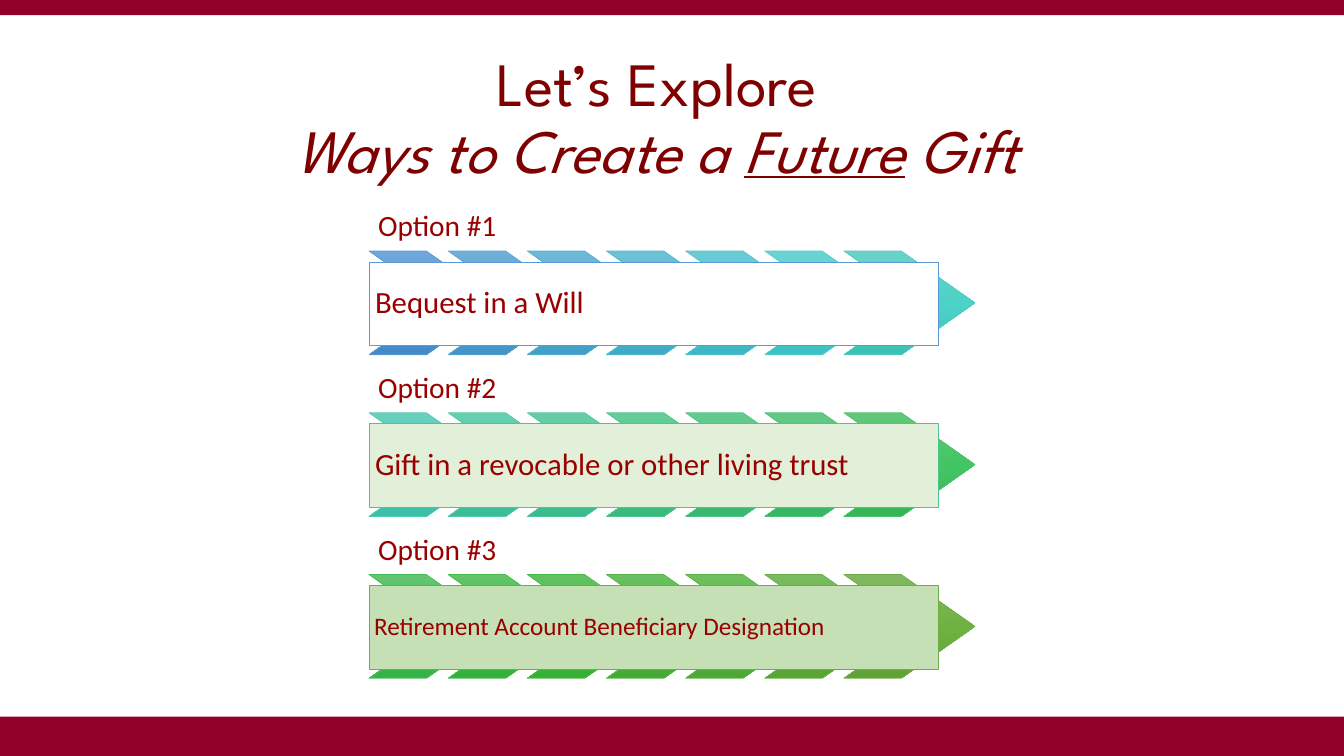
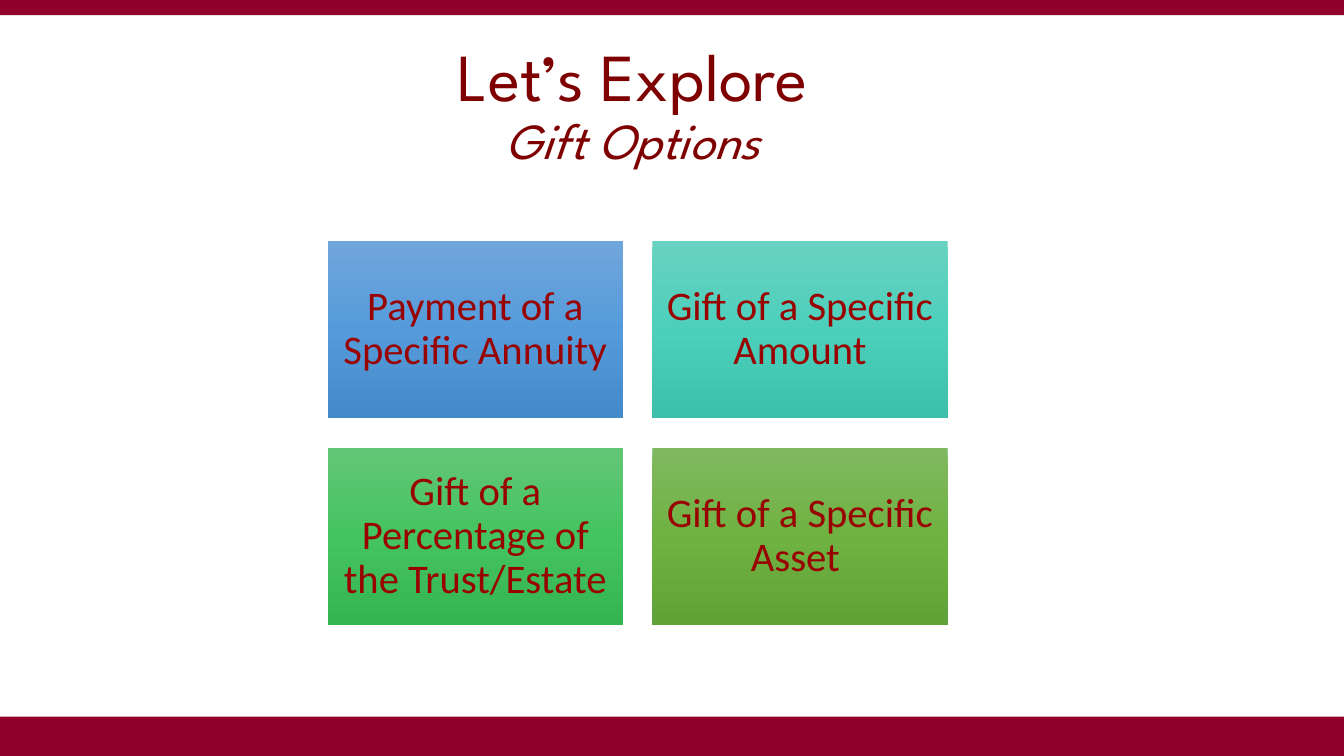
"""Build two slides on ways and options for creating a future gift."""
import colorsys
from copy import deepcopy

from pptx import Presentation
from pptx import util as u
from pptx.dml import color
from pptx.enum import shapes, text

BAND = "900028"
BLUE, GREEN = "5B9BD5", "70AD47"
TITLE = {"name": "League Spartan", "color": "7F0001"}
BODY = {"name": "Calibri", "color": "990000"}
RECTANGLE = shapes.MSO_SHAPE.RECTANGLE
CHEVRON = shapes.MSO_SHAPE.CHEVRON
CENTER, LEFT = text.PP_ALIGN.CENTER, text.PP_ALIGN.LEFT
MIDDLE, BOTTOM = text.MSO_ANCHOR.MIDDLE, text.MSO_ANCHOR.BOTTOM
WHITE_LIGHT, BLACK_LIGHT = 1, 0
GAMMA = 2.2


def add_shape(slide, kind, box, fills, line=None):
    """Add a shape with a solid or three-stop vertical gradient fill."""
    shape = slide.shapes.add_shape(kind, *[u.Inches(value) for value in box])
    shape.shadow.inherit = False
    if len(fills) == 1:
        shape.fill.solid()
        shape.fill.fore_color.rgb = color.RGBColor.from_string(fills[0])
    else:
        shape.fill.gradient()
        shape.fill.gradient_angle = 270
        first_stop = shape._element.spPr.xpath("a:gradFill/a:gsLst/a:gs")[0]
        first_stop.addnext(deepcopy(first_stop))
        for stop, position, value in zip(shape.fill.gradient_stops, (0, 0.5, 1), fills):
            stop.position = position
            stop.color.rgb = color.RGBColor.from_string(value)
    if line:
        shape.line.color.rgb = color.RGBColor.from_string(line)
        shape.line.width = u.Pt(0.5)
    else:
        shape.line.fill.background()
    return shape


def write(shape, lines, style, align, anchor, inset=None):
    """Write lines of (text, format) runs into one paragraph of a shape."""
    frame = shape.text_frame
    frame.word_wrap = True
    frame.vertical_anchor = anchor
    if inset is not None:
        for side in ("left", "top", "right", "bottom"):
            setattr(frame, f"margin_{side}", u.Inches(inset))
    paragraph = frame.paragraphs[0]
    paragraph.alignment = align
    paragraph.line_spacing = 0.9
    for number, runs in enumerate(lines):
        if number:
            paragraph.add_line_break()
        for content, extra in runs:
            run = paragraph.add_run()
            run.text = content
            for name, value in {**style, **extra}.items():
                if name == "color":
                    run.font.color.rgb = color.RGBColor.from_string(value)
                else:
                    setattr(run.font, name, value)


presentation = Presentation()
presentation.slide_width = u.Inches(13.33)
presentation.slide_height = u.Inches(7.5)

large, huge, medium = ({"size": u.Pt(size)} for size in (44, 48, 36))
italic = {**large, "italic": True}
titles = [
    ((1.96, 0.63, 9.11, 1.12), [
        [("Let’s Explore", large)],
        [("Ways to Create a ", italic), ("Future", {**italic, "underline": True}), (" Gift", italic)],
    ]),
    ((4.01, 0.5, 4.53, 1.12), [
        [("Let’s Explore", huge)],
        [("Gift Options", {**medium, "italic": True})],
    ]),
]
slides = []
for box, lines in titles:
    slide = presentation.slides.add_slide(presentation.slide_layouts[6])
    for top, height in ((7.11, 0.4), (0, 0.15)):
        add_shape(slide, RECTANGLE, (0, top, 13.33, height), [BAND])
    title = slide.shapes.add_textbox(*[u.Inches(value) for value in box])
    write(title, lines, TITLE, CENTER, MIDDLE)
    slides.append(slide)
ways_slide, options_slide = slides

ways = [
    ("Bequest in a Will", "FFFFFF", 22, 0.06),
    ("Gift in a revocable or other living trust", "E2F0D9", 22, 0.06),
    ("Retirement Account Beneficiary Designation", "C5E0B4", 18, 0.05),
]
options = [
    "Payment of a Specific Annuity",
    "Gift of a Specific Amount",
    "Gift of a Percentage of the Trust/Estate",
    "Gift of a Specific Asset ",
]
columns = 7

blue_hls, green_hls = (
    colorsys.rgb_to_hls(*[channel / 255 for channel in color.RGBColor.from_string(value)])
    for value in (BLUE, GREEN)
)
stop_rules = [
    {"saturation": 1.03, "lightness": 1.02, "kept": 0.94, "mixed_with": WHITE_LIGHT},
    {"saturation": 1.1, "lightness": 1, "kept": 1, "mixed_with": WHITE_LIGHT},
    {"saturation": 1.2, "lightness": 0.99, "kept": 0.78, "mixed_with": BLACK_LIGHT},
]
line_rule = {"saturation": 1, "lightness": 1, "kept": 1, "mixed_with": WHITE_LIGHT}
palettes = []
for count in (len(ways) * columns, len(options)):
    palette = []
    for step in range(count):
        share = step / (count - 1)
        hue, lightness, saturation = (
            start + (end - start) * share for start, end in zip(blue_hls, green_hls)
        )
        shades = []
        for rule in (*stop_rules, line_rule):
            channels = colorsys.hls_to_rgb(
                hue, lightness * rule["lightness"], saturation * rule["saturation"]
            )
            kept, light = rule["kept"], rule["mixed_with"]
            mixed = [(channel ** GAMMA * kept + light * (1 - kept)) ** (1 / GAMMA) for channel in channels]
            shades.append("".join(f"{round(channel * 255):02X}" for channel in mixed))
        palette.append(shades)
    palettes.append(palette)
chevron_palette, tile_palette = palettes

left, first_top, row_pitch = 3.66, 1.99, 1.605
column_pitch = 4.71 / (columns - 1)
bar_line_step = (len(chevron_palette) - 1) // (len(ways) - 1)
for row, (way, fill, size, inset) in enumerate(ways):
    top = first_top + row * row_pitch
    label = ways_slide.shapes.add_textbox(*[u.Inches(value) for value in (left, top, 5.58, 0.51)])
    write(label, [[(f"Option #{row + 1}", {"size": u.Pt(21)})]], BODY, LEFT, BOTTOM, 0.09)
    for column in range(columns):
        *stops, line = chevron_palette[row * columns + column]
        box = (left + column * column_pitch, top + 0.5, 1.3, 1.03)
        chevron = add_shape(ways_slide, CHEVRON, box, stops, line)
        chevron.adjustments[0] = 0.71
    bar_line = chevron_palette[row * bar_line_step][-1]
    bar = add_shape(ways_slide, RECTANGLE, (left, top + 0.61, 5.65, 0.83), [fill], bar_line)
    write(bar, [[(way, {"size": u.Pt(size)})]], BODY, LEFT, MIDDLE, inset)

width, height, gap = 2.93, 1.76, 0.29
for number, (option, (*stops, line)) in enumerate(zip(options, tile_palette)):
    row, column = divmod(number, 2)
    box = (3.25 + column * (width + gap), 2.39 + row * (height + gap), width, height)
    tile = add_shape(options_slide, RECTANGLE, box, stops)
    write(tile, [[(option, {"size": u.Pt(29)})]], BODY, CENTER, MIDDLE, 0.12)

presentation.save("out.pptx")
